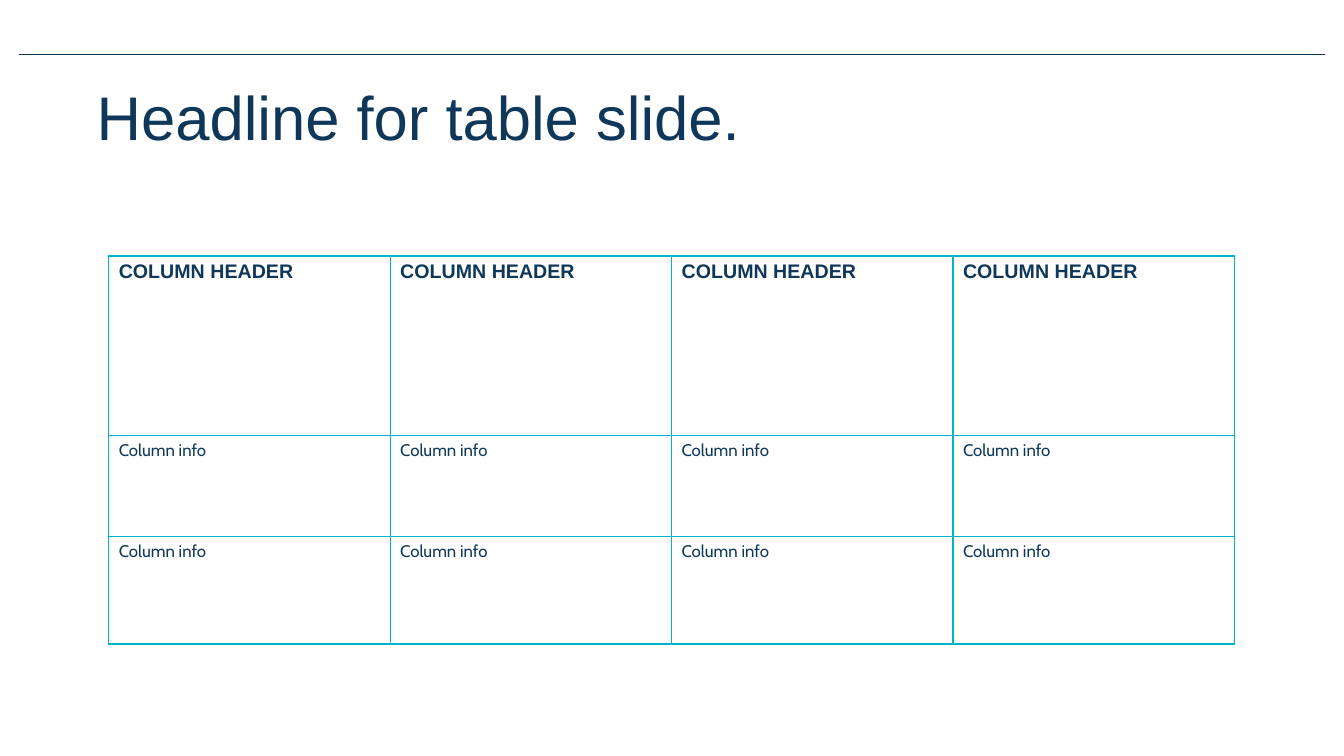
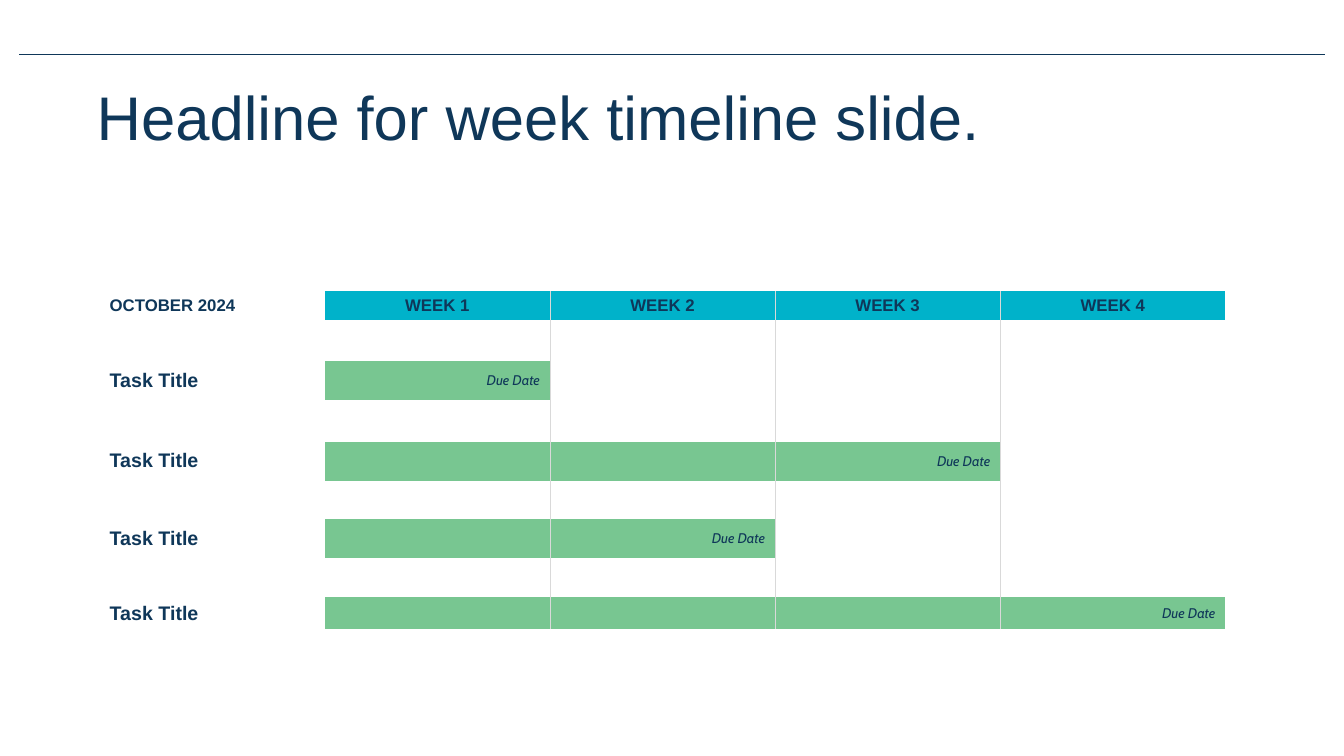
import dataclasses

import lxml.etree
import pptx
import pptx.dml.color
import pptx.enum.shapes
import pptx.enum.text
import pptx.oxml.ns
import pptx.util

Cm = pptx.util.Cm
Pt = pptx.util.Pt
qn = pptx.oxml.ns.qn
ALIGN = pptx.enum.text.PP_ALIGN
ANCHOR = pptx.enum.text.MSO_ANCHOR


@dataclasses.dataclass(frozen=True)
class Theme:
    navy: str = "0F3759"
    teal: str = "00B2CA"
    green: str = "78C691"
    grey: str = "D9D9D9"
    head: str = "Arial"
    body: str = "Cabin"
    title: int = 44
    label: int = 14
    text: int = 12
    note: int = 10
    plain: str = "{2D5ABB26-0587-4C30-8999-92F81FD0307C}"


theme = Theme()


def write(frame, text, size, face, bold=False, italic=False, align=ALIGN.LEFT):
    frame.text = text
    line = frame.paragraphs[0]
    line.alignment = align
    for run in line.runs:
        font = run.font
        font.name, font.size = face, Pt(size)
        font.bold, font.italic = bold, italic
        font.color.rgb = pptx.dml.color.RGBColor.from_string(theme.navy)


def style(cell, sides, color, width, fill=None):
    """Draw the borders named in sides (from "LRTB", in that order), then fill."""
    props = cell._tc.get_or_add_tcPr()
    for side in sides:
        edge = lxml.etree.SubElement(props, qn("a:ln" + side), w=str(Pt(width)))
        paint = lxml.etree.SubElement(edge, qn("a:solidFill"))
        lxml.etree.SubElement(paint, qn("a:srgbClr"), val=color)
    if fill:
        cell.fill.solid()
        cell.fill.fore_color.rgb = pptx.dml.color.RGBColor.from_string(fill)
    else:
        cell.fill.background()


deck = pptx.Presentation()
deck.slide_width, deck.slide_height = Cm(33.87), Cm(19.05)
layout = deck.slide_layouts[5]

# Shared title place and top rule
title = layout.placeholders[0]
title.left, title.top, title.width, title.height = Cm(2.18), Cm(2.06), Cm(28.37), Cm(2.31)

slides = []
for text in ("Headline for table slide.", "Headline for week timeline slide."):
    slide = deck.slides.add_slide(layout)
    frame = slide.shapes.title.text_frame
    write(frame, text, theme.title, theme.head)
    frame.paragraphs[0].line_spacing = 0.9
    frame.vertical_anchor = ANCHOR.TOP
    frame.auto_size = pptx.enum.text.MSO_AUTO_SIZE.NONE
    frame.word_wrap = True
    slides.append(slide)

rule = slides[0].shapes.add_connector(
    pptx.enum.shapes.MSO_CONNECTOR.STRAIGHT, Cm(0.48), Cm(1.37), Cm(33.4), Cm(1.37))
rule.line.color.rgb = pptx.dml.color.RGBColor.from_string(theme.navy)
rule.line.width = Pt(0.5)
lxml.etree.SubElement(rule.element.spPr, qn("a:effectLst"))
layout.shapes.element.append(rule.element)

# Both tables: place, columns and row heights
wide = 28.37
plans = (
    (2.74, 6.45, 4, (4.52, 2.54, 2.72)),
    (2.51, 7.34, 5, (0.73, 1.03, 0.98, 1.05, 0.98, 0.98, 0.98, 0.98, 0.81)),
)
grids = []
for slide, (left, top, count, rows) in zip(slides, plans):
    shape = slide.shapes.add_table(
        len(rows), count, Cm(left), Cm(top), Cm(wide), Cm(sum(rows)))
    grid = shape.table
    grid.horz_banding = False
    next(shape.element.iter(qn("a:tableStyleId"))).text = theme.plain
    for row, height in zip(grid.rows, rows):
        row.height = Cm(height)
    grids.append(grid)
table, weeks = grids

# Table slide
for r, row in enumerate(table.rows):
    for cell in row.cells:
        if r == 0:
            write(cell.text_frame, "COLUMN HEADER", theme.label, theme.head, bold=True)
        else:
            write(cell.text_frame, "Column info", theme.text, theme.body)
        style(cell, "LRTB", theme.teal, 1)

# Timeline slide: each task row maps to its length in weeks
tasks = {2: 1, 4: 3, 6: 2, 8: 4}
last = len(weeks.columns) - 1
for r, row in enumerate(weeks.rows):
    span = tasks.get(r, 0)
    for c, cell in enumerate(row.cells):
        cell.margin_top = cell.margin_bottom = 0
        cell.vertical_anchor = ANCHOR.MIDDLE
        frame = cell.text_frame
        fill = None
        if c and r == 0:
            fill = theme.teal
            write(frame, f"WEEK {c}", theme.text, theme.head, bold=True, align=ALIGN.CENTER)
        elif r == 0:
            write(frame, "OCTOBER 2024", theme.text, theme.head, bold=True)
        elif span and c == 0:
            write(frame, "Task Title", theme.label, theme.head, bold=True)
        elif c <= span and c:
            fill = theme.green
            if c == span:
                write(frame, "Due Date", theme.note, theme.body, italic=True, align=ALIGN.RIGHT)
        sides = ("L" if c > 1 else "") + ("R" if 0 < c < last else "")
        style(cell, sides, theme.grey, 0.25, fill)

deck.save("out.pptx")
